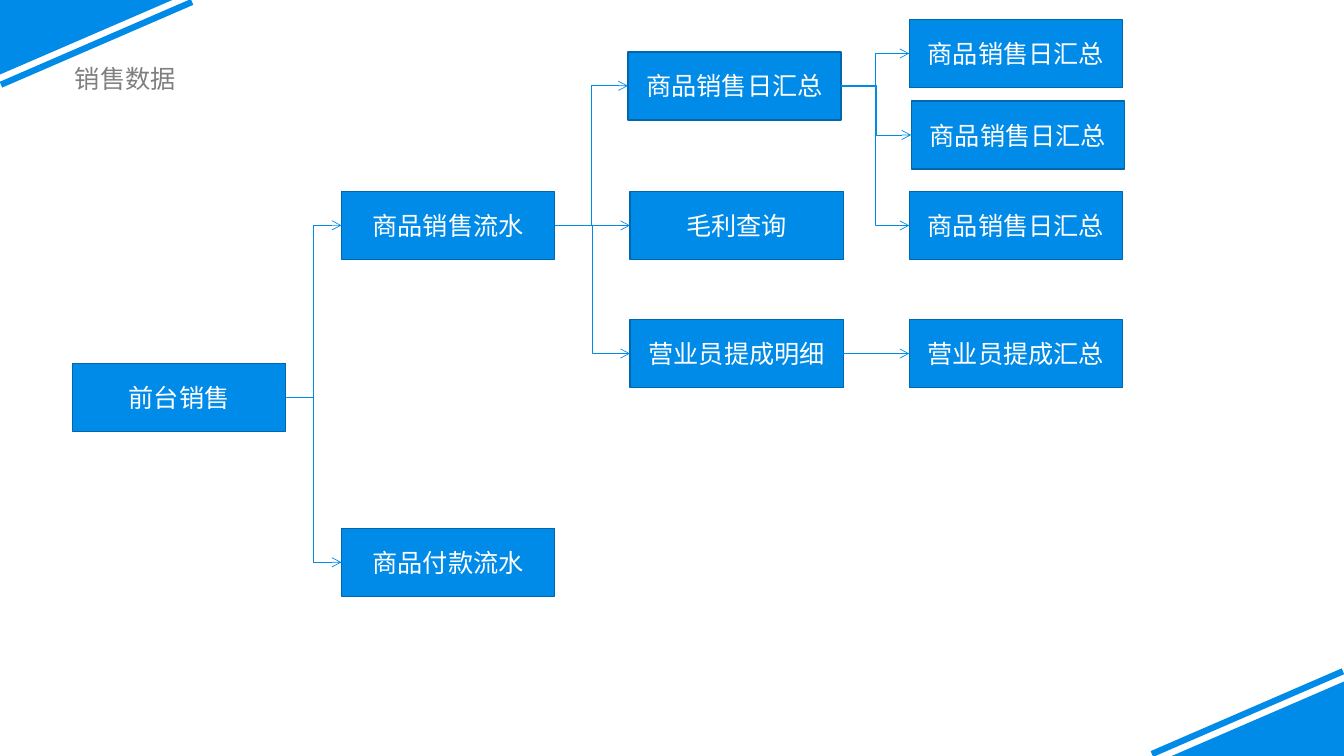
from lxml import etree
from pptx import Presentation
from pptx.dml.color import RGBColor
from pptx.enum.shapes import MSO_CONNECTOR, MSO_SHAPE
from pptx.enum.text import MSO_ANCHOR, PP_ALIGN
from pptx.oxml.ns import qn
from pptx.util import Pt

PROCESS = MSO_SHAPE.FLOWCHART_PROCESS
STRAIGHT = MSO_CONNECTOR.STRAIGHT
ELBOW = MSO_CONNECTOR.ELBOW
MIDDLE = MSO_ANCHOR.MIDDLE
CENTER = PP_ALIGN.CENTER

BLUE = RGBColor(0x01, 0x8B, 0xE9)
DARK_BLUE = RGBColor(0x01, 0x67, 0xAC)
GREY = RGBColor(0x7F, 0x7F, 0x7F)
WHITE = RGBColor(0xFF, 0xFF, 0xFF)

SLIDE_WIDTH, SLIDE_HEIGHT = 960, 540
STEP_WIDTH, STEP_HEIGHT = 152.3, 48.5
LEFT_SITE, RIGHT_SITE = 1, 3

STEPS = {
    "counter": ("前台销售", 51.8, 259.6),
    "sales": ("商品销售流水", 243.9, 136.8),
    "payments": ("商品付款流水", 243.9, 377.4),
    "daily": ("商品销售日汇总", 448.5, 37.1),
    "daily_top": ("商品销售日汇总", 649.5, 14),
    "daily_middle": ("商品销售日汇总", 650.9, 72.2),
    "daily_bottom": ("商品销售日汇总", 649.5, 136.8),
    "margin": ("毛利查询", 450, 136.8),
    "commission": ("营业员提成明细", 450, 228.3),
    "commission_total": ("营业员提成汇总", 649.5, 228.3),
}
LINKS = [
    ("counter", "sales", ELBOW),
    ("counter", "payments", ELBOW),
    ("sales", "daily", ELBOW),
    ("sales", "margin", STRAIGHT),
    ("sales", "commission", ELBOW),
    ("daily", "daily_top", ELBOW),
    ("daily", "daily_middle", ELBOW),
    ("daily", "daily_bottom", ELBOW),
    ("commission", "commission_total", STRAIGHT),
]


def add_text(paragraph, text, color):
    run = paragraph.add_run()
    run.text = text
    run.font.name = "Arial"
    run.font.size = Pt(18)
    run.font.color.rgb = color


def add_line(slide, kind, start, end, width):
    connector = slide.shapes.add_connector(
        kind, Pt(start[0]), Pt(start[1]), Pt(end[0]), Pt(end[1]))
    connector.line.color.rgb = BLUE
    connector.line.width = Pt(width)
    etree.SubElement(connector._element.spPr, qn("a:effectLst"))
    return connector


def draw_corner(slide, left, top, direction):
    def place(x, y):
        return left + direction * x, top + direction * y

    points = [tuple(Pt(value) for value in place(x, y))
              for x, y in ((0, 53.2), (0, 0), (123.1, 0))]
    builder = slide.shapes.build_freeform(*points[0])
    builder.add_line_segments(points[1:], close=True)
    triangle = builder.convert_to_shape()
    triangle.shadow.inherit = False
    triangle.fill.solid()
    triangle.fill.fore_color.rgb = BLUE
    triangle.line.fill.background()
    add_line(slide, STRAIGHT, place(0.7, 60.5), place(137.2, 1.4), 4.5)


def draw_title(slide, left, top, width, height):
    title = slide.shapes.add_textbox(Pt(left), Pt(top), Pt(width), Pt(height))
    title.text_frame.word_wrap = False
    add_text(title.text_frame.paragraphs[0], "销售数据", GREY)


def draw_step(slide, text, left, top):
    step = slide.shapes.add_shape(
        PROCESS, Pt(left), Pt(top), Pt(STEP_WIDTH), Pt(STEP_HEIGHT))
    step.shadow.inherit = False
    step.fill.solid()
    step.fill.fore_color.rgb = BLUE
    step.line.color.rgb = DARK_BLUE
    step.line.width = Pt(1)
    step.text_frame.word_wrap = True
    step.text_frame.vertical_anchor = MIDDLE
    paragraph = step.text_frame.paragraphs[0]
    paragraph.alignment = CENTER
    add_text(paragraph, text, WHITE)
    return step


def draw_flow(slide, left, top):
    shapes = {name: draw_step(slide, text, left + x, top + y)
              for name, (text, x, y) in STEPS.items()}
    for source, target, kind in LINKS:
        arrow = add_line(slide, kind, (left, top), (left, top), 0.5)
        outline = arrow.line._get_or_add_ln()
        etree.SubElement(outline, qn("a:tailEnd"), type="arrow")
        arrow.begin_connect(shapes[source], RIGHT_SITE)
        arrow.end_connect(shapes[target], LEFT_SITE)


def main():
    presentation = Presentation()
    presentation.slide_width = Pt(SLIDE_WIDTH)
    presentation.slide_height = Pt(SLIDE_HEIGHT)
    slide = presentation.slides.add_slide(presentation.slide_layouts[6])
    draw_corner(slide, SLIDE_WIDTH, SLIDE_HEIGHT, -1)
    draw_corner(slide, 0, 0, 1)
    draw_title(slide, 46.5, 41.8, 86.4, 29.1)
    draw_flow(slide, 0, 0)
    presentation.save("out.pptx")


if __name__ == "__main__":
    main()
